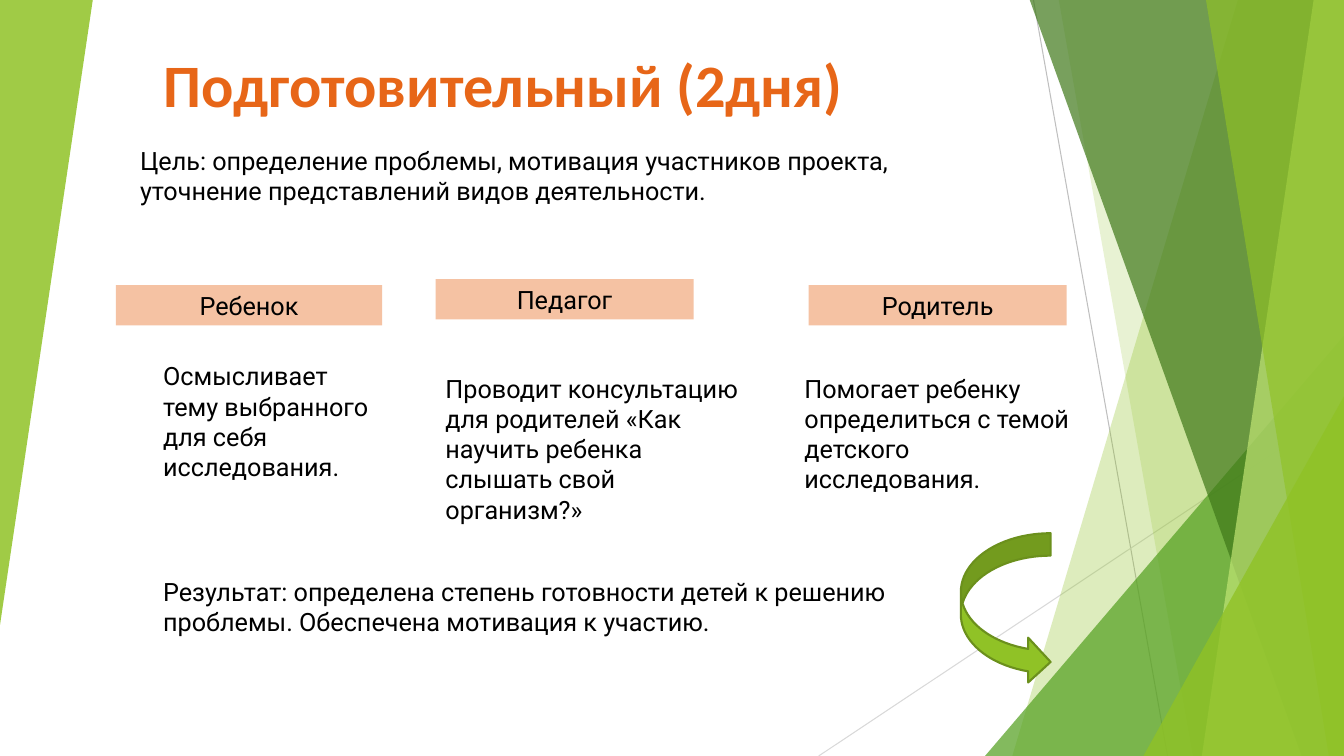
from pptx import Presentation
from pptx.dml import color
from pptx.enum import shapes, text
from pptx.oxml import ns
from pptx.util import Inches, Pt
from lxml import etree

W, H = 13.33, 7.5
GREEN, PEACH, ORANGE, BLACK = "90C226", "F5C2A3", "E76618", "000000"

TITLE = ("Подготовительный (2дня)", (1.52, 0.42, 8.56, 0.82))
RAYS = [((10.25, 0), (11.58, H), "BFBFBF"), ((W, 4.03), (8.12, H), "D9D9D9")]
SHARDS = [
    ("band", 12.28, 10.04, GREEN, 30),
    ("band", 10.5, 11.83, GREEN, 20),
    ("triangle", (9.77, 3.33, 3.56, 4.17), 0, "54A021", 72),
    ("band", 10.21, 12.91, "3F7819", 70),
    ("band", 13.03, 11.92, "C0E474", 70),
    ("band", 11.96, 13.18, GREEN, 65),
    ("triangle", (11.34, 3.93, 1.99, 3.57), 0, GREEN, 80),
    ("triangle", (0, 0, 0.92, 6.2), 180, GREEN, 85),
]
ROLES = [
    ("Ребенок", (1.15, 2.83, 2.64, 0.4)),
    ("Педагог", (4.32, 2.77, 2.56, 0.4)),
    ("Родитель", (8.02, 2.83, 2.56, 0.4)),
]
NOTES = [
    ("Цель: определение проблемы, мотивация участников проекта, уточнение представлений видов деятельности.",
     (1.29, 1.39, 8.68, 0.71)),
    ("Осмысливает тему выбранного для себя исследования.", (1.52, 3.53, 2.27, 1.31)),
    ("Проводит консультацию для родителей «Как научить ребенка слышать свой организм?»",
     (4.32, 3.65, 3.17, 1.62)),
    ("Помогает ребенку определиться с темой детского исследования.", (7.88, 3.65, 2.83, 1.31)),
    ("Результат: определена степень готовности детей к решению проблемы. Обеспечена мотивация к участию.",
     (1.52, 5.67, 7.44, 0.71)),
]
ARROW = (9.53, 5.29, 0.89, 1.5)


def rgb(value):
    return color.RGBColor.from_string(value)


def inches(values):
    return [Inches(v) for v in values]


def paint(sp, fill, alpha=100, line=None, width=1.5):
    sp.shadow.inherit = False
    sp.fill.solid()
    sp.fill.fore_color.rgb = rgb(fill)
    if alpha < 100:
        clr = sp.fill._xPr.find(".//" + ns.qn("a:srgbClr"))
        etree.SubElement(clr, ns.qn("a:alpha"), val=str(alpha * 1000))
    if line:
        sp.line.color.rgb = rgb(line)
        sp.line.width = Pt(width)
    else:
        sp.line.fill.background()


def write(sp, words, size=18, font="Roboto", ink=BLACK, bold=False,
          align=text.PP_ALIGN.LEFT, anchor=text.MSO_ANCHOR.TOP):
    tf = sp.text_frame
    tf.word_wrap = True
    tf.auto_size = text.MSO_AUTO_SIZE.NONE
    tf.vertical_anchor = anchor
    p = tf.paragraphs[0]
    p.alignment = align
    r = p.add_run()
    r.text = words
    r.font.size = Pt(size)
    r.font.name = font
    r.font.bold = bold
    r.font.color.rgb = rgb(ink)


def add_ray(s, start, end, line):
    c = s.shapes.add_connector(shapes.MSO_CONNECTOR.STRAIGHT, *inches(start + end))
    c.line.color.rgb = rgb(line)
    c.line.width = Pt(0.75)
    etree.SubElement(c._element.spPr, ns.qn("a:effectLst"))


def add_band(s, top, bottom):
    points = [inches(pt) for pt in ((top, -0.01), (W, -0.01), (W, H), (bottom, H))]
    fb = s.shapes.build_freeform(*points[0])
    fb.add_line_segments(points[1:], close=True)
    return fb.convert_to_shape()


def add_triangle(s, box, turn):
    sp = s.shapes.add_shape(shapes.MSO_SHAPE.ISOSCELES_TRIANGLE, *inches(box))
    sp.adjustments[0] = 1
    sp.rotation = turn
    return sp


def main():
    prs = Presentation()
    prs.slide_width, prs.slide_height = inches((W, H))
    s = prs.slides.add_slide(prs.slide_layouts[5])

    words, box = TITLE
    title = s.shapes.title
    title.left, title.top, title.width, title.height = inches(box)
    write(title, words, size=43, font="Calibri", ink=ORANGE, bold=True)

    for ray in RAYS:
        add_ray(s, *ray)
    builders = {"band": add_band, "triangle": add_triangle}
    for kind, a, b, fill, alpha in SHARDS:
        paint(builders[kind](s, a, b), fill, alpha)

    for words, box in ROLES:
        sp = s.shapes.add_shape(shapes.MSO_SHAPE.RECTANGLE, *inches(box))
        paint(sp, PEACH)
        write(sp, words, align=text.PP_ALIGN.CENTER, anchor=text.MSO_ANCHOR.MIDDLE)
    for words, box in NOTES:
        write(s.shapes.add_textbox(*inches(box)), words)

    arrow = s.shapes.add_shape(shapes.MSO_SHAPE.CURVED_RIGHT_ARROW, *inches(ARROW))
    paint(arrow, GREEN, line="6B901C")

    prs.save("out.pptx")


if __name__ == "__main__":
    main()
